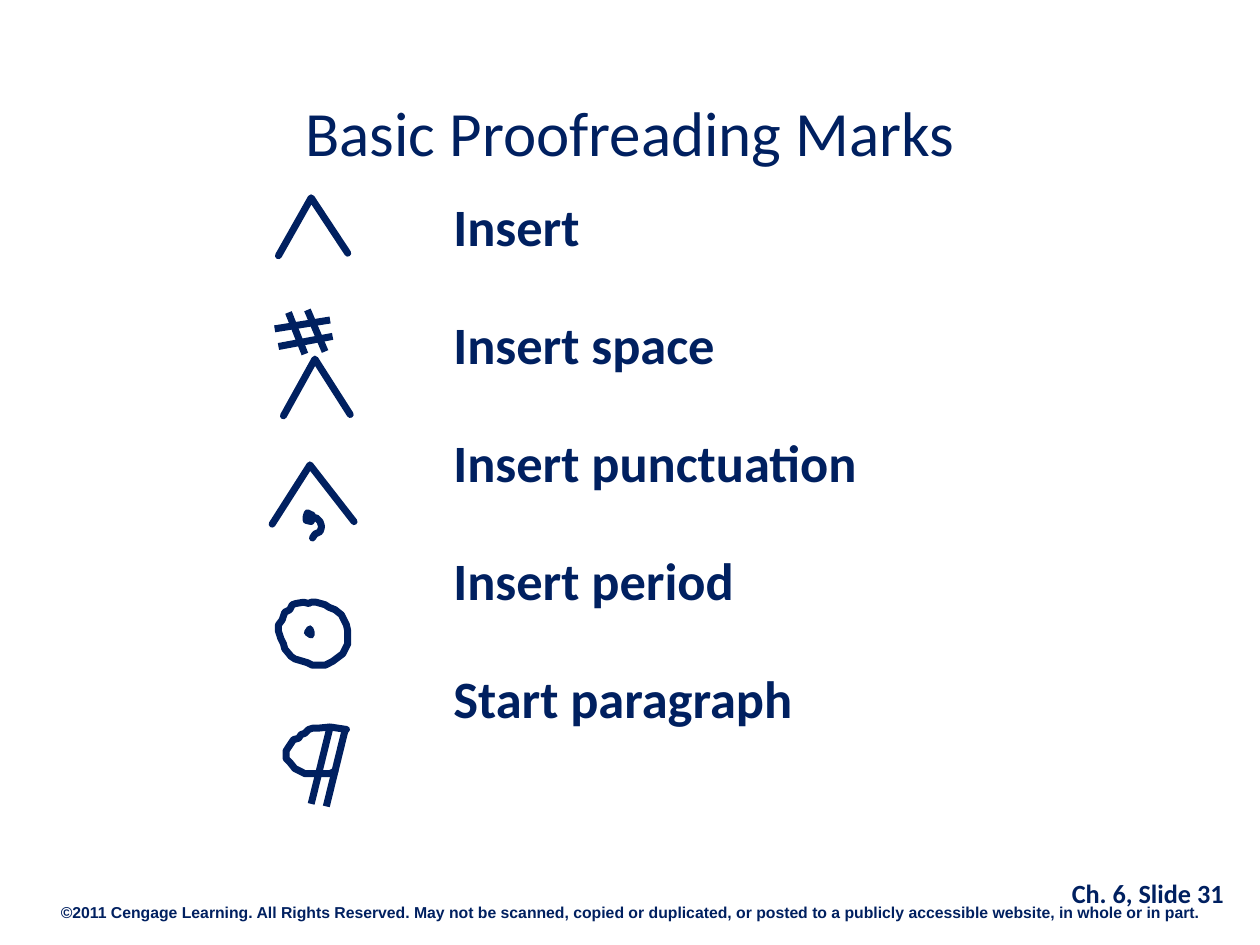
from lxml import etree
from pptx import Presentation
from pptx.dml.color import RGBColor
from pptx.enum.shapes import MSO_CONNECTOR
from pptx.enum.text import MSO_ANCHOR, PP_ALIGN
from pptx.oxml.ns import qn
from pptx.util import Cm, Pt

CENTER, LEFT = PP_ALIGN.CENTER, PP_ALIGN.LEFT
TOP, MIDDLE = MSO_ANCHOR.TOP, MSO_ANCHOR.MIDDLE
STRAIGHT = MSO_CONNECTOR.STRAIGHT
UNIT = Cm(0.0254)  # drawing grid for the hand-drawn marks
STROKE = Pt(4)


def color(hex_string):
    return RGBColor.from_string(hex_string)


NAVY = color("002060")

presentation = Presentation()
presentation.slide_width = Cm(25.4)
presentation.slide_height = Cm(19.05)
slide = presentation.slides.add_slide(presentation.slide_layouts[6])


def add_text(box, lines, anchor, font_format, paragraph_format):
    shape = slide.shapes.add_textbox(*(Cm(length) for length in box))
    frame = shape.text_frame
    frame.word_wrap = True
    frame.vertical_anchor = anchor
    for index, line in enumerate(lines):
        paragraph = frame.paragraphs[0] if index == 0 else frame.add_paragraph()
        paragraph.text = line
        for name, value in paragraph_format.items():
            if index or name != "space_before":
                setattr(paragraph, name, value)
        for name, value in font_format.items():
            setattr(paragraph.font, name, value)
        paragraph.font.color.rgb = NAVY


# Footer: copyright line and slide number
add_text((0.2, 18.21, 25, 0.6),
         ["©2011 Cengage Learning. All Rights Reserved. May not be scanned, copied or duplicated, "
          "or posted to a publicly accessible website, in whole or in part."],
         TOP, {"name": "Arial", "size": Pt(9), "bold": True},
         {"alignment": CENTER, "line_spacing": 0.6})
add_text((21, 17.78, 4.28, 0.84), ["Ch. 6, Slide 31"],
         TOP, {"name": "Calibri", "size": Pt(15), "bold": True},
         {"alignment": CENTER, "line_spacing": 0.6})

# Title
add_text((0.64, 1.47, 24.13, 2.54), ["Basic Proofreading Marks"],
         MIDDLE, {"name": "Calibri", "size": Pt(36)},
         {"alignment": CENTER, "line_spacing": 0.9})

# Meanings of the marks
add_text((8.89, 3.79, 15.88, 12.19),
         ["Insert", "Insert space", "Insert punctuation", "Insert period", "Start paragraph"],
         TOP, {"name": "Calibri", "size": Pt(30), "bold": True},
         {"alignment": LEFT, "space_before": Pt(15), "space_after": Pt(16.4)})

# Outlined marks, in grid units
outlines = [
    # Carets for insert, space and punctuation
    [(221, 203), (247, 157), (276, 201)],
    [(225, 330), (250, 285), (278, 329)],
    [(216, 416), (246, 369), (281, 414)],
    # Comma
    [(248, 409), (248, 412), (248, 409), (244, 407), (243, 410), (243, 413),
     (247, 414), (248, 411), (251, 411), (254, 414), (255, 417), (255, 419),
     (254, 422), (250, 424), (248, 427)],
    # Period dot and circle
    [(247, 502), (246, 499), (244, 502), (247, 504), (247, 502)],
    [(245, 479), (241, 478), (235, 479), (232, 480), (230, 484), (226, 486),
     (225, 489), (224, 492), (221, 496), (221, 498), (221, 501), (223, 507),
     (225, 511), (226, 515), (231, 521), (234, 523), (244, 526), (248, 528),
     (252, 528), (258, 528), (264, 525), (272, 519), (274, 515), (276, 511),
     (276, 507), (276, 501), (275, 496), (273, 492), (271, 488), (266, 484),
     (261, 482), (258, 480), (251, 478), (247, 478), (245, 479)],
    # Paragraph bowl
    [(275, 579), (262, 577), (252, 578), (248, 578), (245, 579), (242, 582),
     (239, 583), (237, 586), (233, 587), (231, 590), (227, 596), (227, 599),
     (227, 602), (230, 605), (234, 610), (238, 612), (242, 614), (246, 614),
     (250, 614), (262, 614), (266, 612)],
]
for points in outlines:
    builder = slide.shapes.build_freeform(*points[0], scale=UNIT)
    builder.add_line_segments(points[1:], close=False)
    shape = builder.convert_to_shape()
    shape.shadow.inherit = False
    shape.fill.background()
    shape.line.color.rgb = NAVY
    shape.line.width = STROKE
    line = shape.line._get_or_add_ln()
    line.set("cap", "rnd")
    etree.SubElement(line, qn("a:round"))

# Straight strokes, in grid units
strokes = [
    # Space sign
    (218, 261, 262, 254), (221, 275, 264, 267),
    (229, 248, 242, 281), (244, 246, 258, 279),
    # Paragraph stems
    (262, 577, 247, 638), (274, 579, 259, 640),
]
for stroke in strokes:
    connector = slide.shapes.add_connector(STRAIGHT, *(UNIT * value for value in stroke))
    connector.line.color.rgb = NAVY
    connector.line.width = STROKE
    etree.SubElement(connector._element.spPr, qn("a:effectLst"))

presentation.save("out.pptx")
